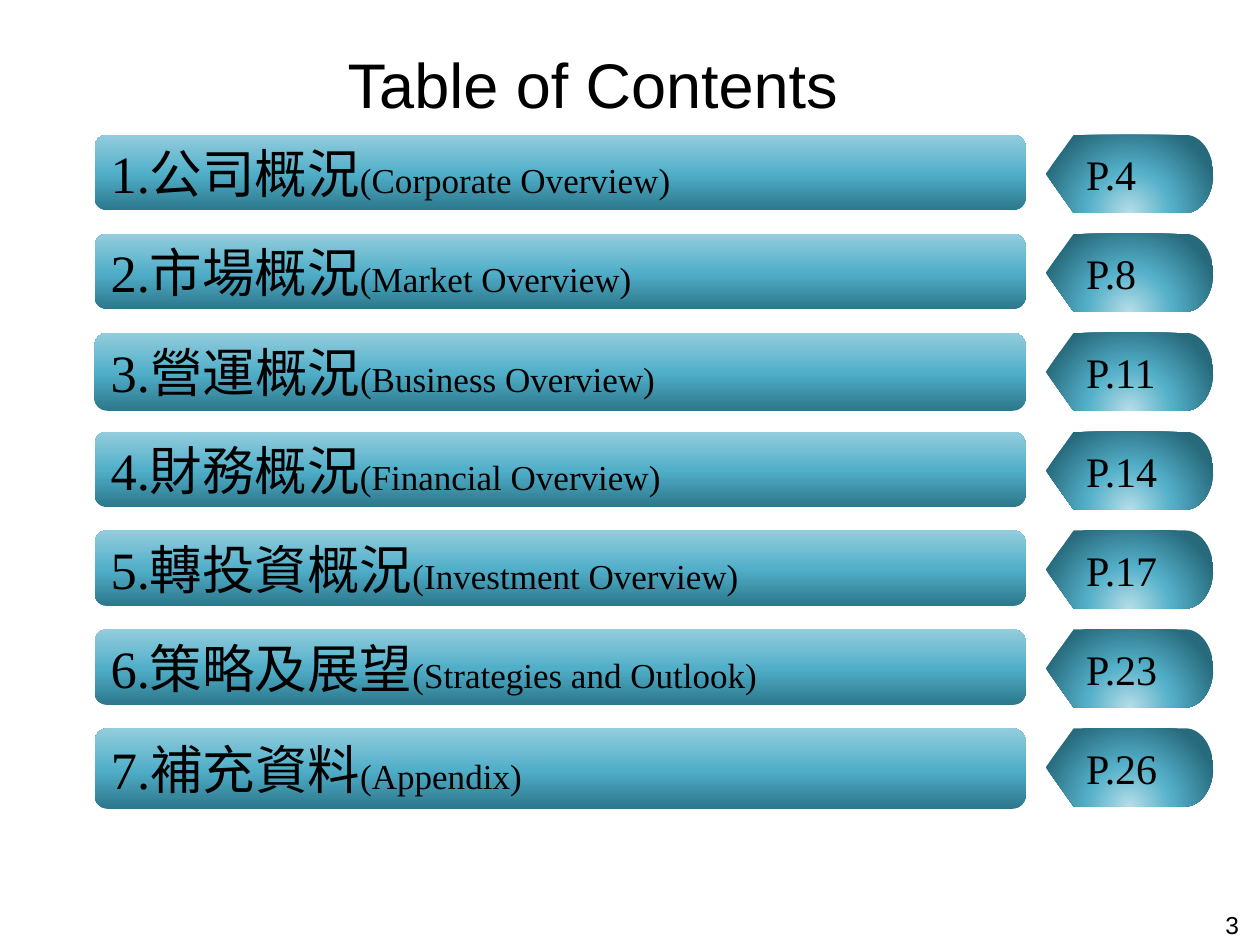
from lxml import etree
from pptx import Presentation
from pptx import util as u
from pptx.dml.color import RGBColor
from pptx.enum import shapes, text
from pptx.oxml import ns

WIDTH, HEIGHT = 10, 7.5
FIRST_TOP, ROW_PITCH = 1.07, 0.785
BAR_LEFT, BAR_WIDTH, BAR_HEIGHT = 0.75, 7.39, 0.6
TAG_LEFT, TAG_WIDTH, TAG_HEIGHT = 8.3, 1.33, 0.62
SERIF, SANS = "Times New Roman", "Arial"
BAR_STOPS = [(0, "2C778B"), (48, "50AEC8"), (100, "93CDDD")]
TAG_STOPS = [(0, "B7DEE8"), (46, "54B0C9"), (100, "276A7C")]

# Chinese heading, English heading, page, bar height
CONTENTS = [
    ("1.公司概況", "(Corporate Overview)", "P.4", BAR_HEIGHT),
    ("2.市場概況", "(Market Overview)", "P.8", BAR_HEIGHT),
    ("3.營運概況", "(Business Overview)", "P.11", 0.62),
    ("4.財務概況", "(Financial Overview)", "P.14", BAR_HEIGHT),
    ("5.轉投資概況", "(Investment Overview)", "P.17", BAR_HEIGHT),
    ("6.策略及展望", "(Strategies and Outlook)", "P.23", BAR_HEIGHT),
    ("7.補充資料", "(Appendix)", "P.26", 0.64),
]


def color(value):
    return RGBColor.from_string(value)


def add_span(para, words, size, font):
    span = para.add_run()
    span.text = words
    span.font.size = u.Pt(size)
    span.font.name = font
    span.font.color.rgb = color("000000")


def set_gradient(shape, stops, radial=False):
    """Fill upward, or outward from a focus below the shape."""
    shape.fill.gradient()
    fill = shape._element.spPr.find(ns.qn("a:gradFill"))
    for child in list(fill):
        fill.remove(child)
    stop_list = etree.SubElement(fill, ns.qn("a:gsLst"))
    for position, value in stops:
        stop = etree.SubElement(stop_list, ns.qn("a:gs"), pos=str(position * 1000))
        etree.SubElement(stop, ns.qn("a:srgbClr"), val=value)
    if radial:
        route = etree.SubElement(fill, ns.qn("a:path"), path="circle")
        etree.SubElement(route, ns.qn("a:fillToRect"),
                         l="50000", t="130000", r="50000", b="-30000")
    else:
        etree.SubElement(fill, ns.qn("a:lin"), ang="16200000", scaled="0")


def add_label(page, kind, left, top, width, height, spans, stops, radial=False):
    shape = page.shapes.add_shape(
        kind, u.Inches(left), u.Inches(top), u.Inches(width), u.Inches(height))
    shape.shadow.inherit = False
    shape.line.fill.background()
    set_gradient(shape, stops, radial)
    shape.text_frame.vertical_anchor = text.MSO_ANCHOR.MIDDLE
    para = shape.text_frame.paragraphs[0]
    para.alignment = text.PP_ALIGN.LEFT
    for words, size in spans:
        add_span(para, words, size, SERIF)


def add_title(page, words):
    title = page.shapes.title
    title.left, title.top = u.Inches(2.66), u.Inches(0.31)
    title.width, title.height = u.Inches(5.47), u.Inches(0.71)
    title.text_frame.vertical_anchor = text.MSO_ANCHOR.TOP
    para = title.text_frame.paragraphs[0]
    para.alignment = text.PP_ALIGN.LEFT
    add_span(para, words, 36, SANS)


def add_page_number(page, number):
    box = page.shapes.add_textbox(
        u.Inches(9.61), u.Inches(7.17), u.Inches(0.34), u.Inches(0.33))
    box.text_frame.word_wrap = False
    para = box.text_frame.paragraphs[0]
    para.alignment = text.PP_ALIGN.CENTER
    add_span(para, number, 14, SANS)


def main():
    deck = Presentation()
    deck.slide_width, deck.slide_height = u.Inches(WIDTH), u.Inches(HEIGHT)
    page = deck.slides.add_slide(deck.slide_layouts[5])
    add_title(page, "Table of Contents")

    # One bar and one page tag for each chapter
    for row, (chinese, english, number, height) in enumerate(CONTENTS):
        top = FIRST_TOP + row * ROW_PITCH
        add_label(page, shapes.MSO_SHAPE.ROUNDED_RECTANGLE, BAR_LEFT, top,
                  BAR_WIDTH, height, [(chinese, 30), (english, 20)], BAR_STOPS)
        add_label(page, shapes.MSO_SHAPE.FLOWCHART_DISPLAY, TAG_LEFT, top,
                  TAG_WIDTH, TAG_HEIGHT, [(number, 24)], TAG_STOPS, radial=True)

    add_page_number(page, "3")
    deck.save("out.pptx")


if __name__ == "__main__":
    main()
